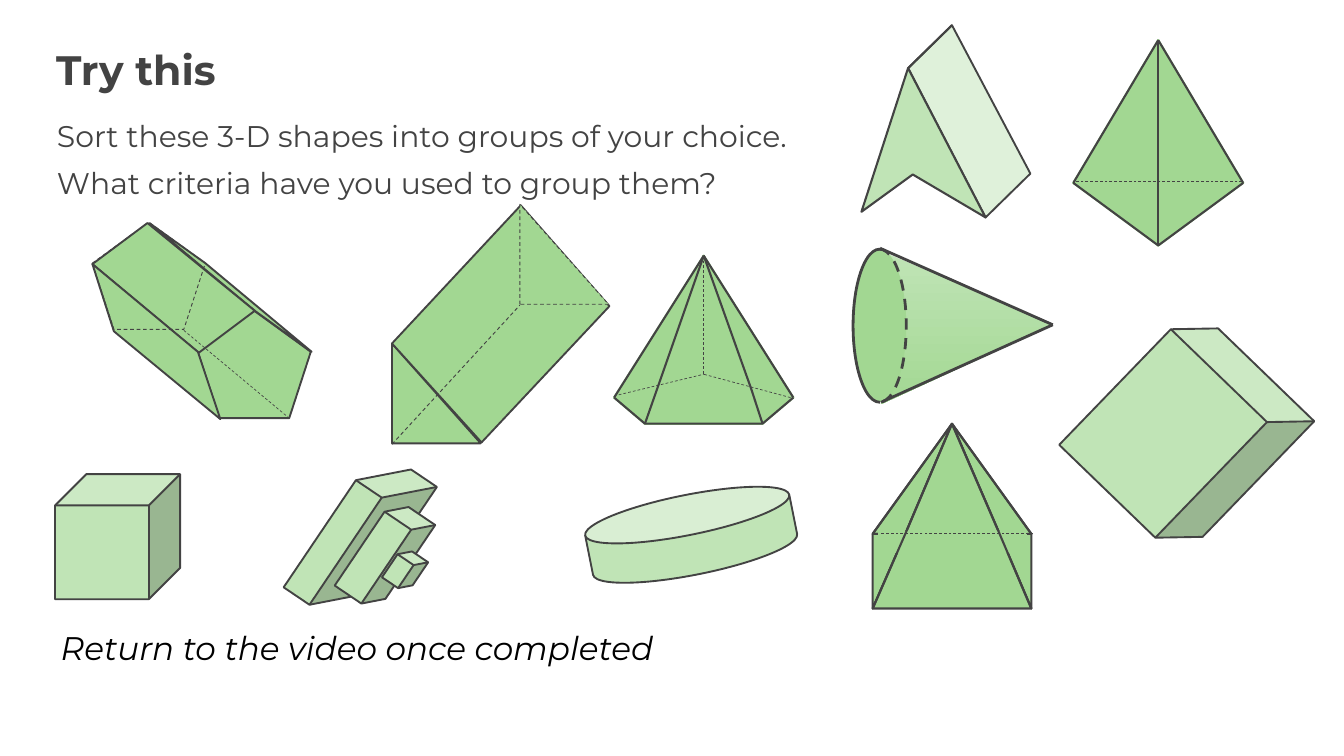
from lxml import etree
from pptx import Presentation
from pptx.dml.color import RGBColor
from pptx.enum.dml import MSO_LINE
from pptx.enum.shapes import MSO_CONNECTOR, MSO_SHAPE
from pptx.enum.text import MSO_ANCHOR
from pptx.oxml.ns import qn
from pptx.util import Pt

INK = RGBColor(0x43, 0x43, 0x43)
BLACK = RGBColor(0x00, 0x00, 0x00)
LEAF = RGBColor(0xA2, 0xD7, 0x92)
MINT = RGBColor(0xC0, 0xE4, 0xB6)
PALE = RGBColor(0xDF, 0xF1, 0xDA)
CONE_END = RGBColor(0xA3, 0xD8, 0x93)

DASH = MSO_LINE.DASH
STRAIGHT = MSO_CONNECTOR.STRAIGHT
TOP = MSO_ANCHOR.TOP
CUBE, CAN, RECT = MSO_SHAPE.CUBE, MSO_SHAPE.CAN, MSO_SHAPE.RECTANGLE
ARC, OVAL = MSO_SHAPE.ARC, MSO_SHAPE.OVAL
PENTAGON = MSO_SHAPE.REGULAR_PENTAGON
RIGHT_TRIANGLE = MSO_SHAPE.RIGHT_TRIANGLE


class Deck:
    """Holds the style, the current slide and the group being filled."""

    font = "Montserrat"

    def __init__(self, width, height):
        self.file = Presentation()
        self.file.slide_width, self.file.slide_height = Pt(width), Pt(height)
        self.page = self.file.slides.add_slide(self.file.slide_layouts[6])
        self.shapes = self.page.shapes

    def group(self):
        self.shapes = self.page.shapes.add_group_shape().shapes

    def ungroup(self):
        self.shapes = self.page.shapes

    def stroke(self, line, colour, width, dash=None):
        if width == 0:
            line.fill.background()
            return
        line.color.rgb = colour
        for name, value in {"width": Pt(width), "dash_style": dash}.items():
            setattr(line, name, value)

    def paint(self, shape, fill, colour, width, dash):
        shape.shadow.inherit = False
        if fill is None:
            shape.fill.background()
        else:
            shape.fill.solid()
            shape.fill.fore_color.rgb = fill
        self.stroke(shape.line, colour, width, dash)
        return shape

    def preset(self, kind, frame, fill, colour=INK, width=2, dash=None,
               turn=0, adjust=()):
        shape = self.shapes.add_shape(kind, *map(Pt, frame))
        shape.rotation = turn
        for index, value in enumerate(adjust):
            shape.adjustments[index] = value
        return self.paint(shape, fill, colour, width, dash)

    def outline(self, points, fill, colour=INK, width=2.25, close=True):
        corners = [(Pt(x), Pt(y)) for x, y in points]
        builder = self.shapes.build_freeform(*corners[0], scale=1.0)
        builder.add_line_segments(corners[1:], close=close)
        return self.paint(builder.convert_to_shape(), fill, colour, width, None)

    def edge(self, start, end, width=2.25, dash=None):
        line = self.shapes.add_connector(STRAIGHT, *map(Pt, (*start, *end)))
        self.stroke(line.line, INK, width, dash)
        etree.SubElement(line._element.spPr, qn("a:effectLst"))

    def text(self, frame, lines, size, colour, spacing, margins=(0, 0, 0, 0),
             bold=False, italic=False):
        box = self.shapes.add_textbox(*map(Pt, frame)).text_frame
        left, top, right, bottom = map(Pt, margins)
        settings = {"word_wrap": True, "vertical_anchor": TOP,
                    "margin_left": left, "margin_top": top,
                    "margin_right": right, "margin_bottom": bottom}
        for name, value in settings.items():
            setattr(box, name, value)
        for index, words in enumerate(lines):
            para = box.add_paragraph() if index else box.paragraphs[0]
            para.line_spacing = spacing
            span = para.add_run()
            span.text = words
            span.font.color.rgb = colour
            style = {"name": self.font, "size": Pt(size),
                     "bold": bold, "italic": italic}
            for name, value in style.items():
                setattr(span.font, name, value)


def main():
    deck = Deck(1440, 810)

    # Heading and task
    deck.text((60, 40, 1040, 128), ["Try this"], 44, INK, 1.15, bold=True)
    deck.text((59, 115, 1295, 469),
              ["Sort these 3-D shapes into groups of your choice.",
               "What criteria have you used to group them?"],
              32, INK, 1.3, margins=(2, 0, 0, 0))

    # Cube, cuboid and cylinder
    deck.preset(CUBE, (59, 508, 134, 134), MINT, adjust=[0.25])
    deck.preset(CUBE, (1182, 360, 179, 208), MINT, turn=44, adjust=[0.2])
    deck.preset(CAN, (629, 530, 223, 86), MINT, turn=348.7, adjust=[0.5])

    # Stepped stack of cuboids
    deck.group()
    for frame, depth in [((348, 485, 76, 181), 0.56),
                         ((386, 538, 53, 114), 0.35),
                         ((418, 590, 32, 41), 0.35)]:
        deck.preset(CUBE, frame, MINT, turn=34, adjust=[depth])

    # Arrowhead prism
    deck.group()
    tip, back_tip, heel = (973, 73), (1020, 27), (1056, 233)
    deck.outline([tip, back_tip, (1104, 186), heel], PALE, width=2)
    deck.outline([(923, 227), tip, heel, (978, 187)], MINT)
    deck.edge(tip, back_tip)

    # Pentagonal pyramid
    deck.group()
    apex, left, right = (754, 274), (658, 426), (850, 426)
    front_left, front_right = (691, 454), (817, 454)
    inner_left, inner_right, back = (704, 417), (805, 417), (754, 408)
    for face in [(inner_right, front_right, front_left, inner_left, back),
                 (inner_left, apex, back), (left, apex, inner_left),
                 (inner_left, front_left, left),
                 (inner_right, front_right, right),
                 (back, apex, inner_right), (apex, right, inner_right)]:
        deck.outline(face, LEAF, colour=LEAF)
    for corner in (left, right):
        deck.edge(apex, corner)
    deck.outline([left, front_left, front_right, right], LEAF, close=False)
    for side in [(inner_left, front_left), (inner_right, front_right)]:
        deck.outline([apex, *side], None, close=False)
    for corner in (apex, (663, 423), (847, 426)):
        deck.edge(corner, (754, 401), width=0.75, dash=DASH)

    # Square pyramid
    deck.group()
    apex = (1020, 454)
    back_left, back_right = (935, 572), (1105, 572)
    front_left, front_right = (935, 652), (1105, 652)
    inner_left, inner_right = (970, 572), (1071, 572)
    for face in [(front_right, inner_right, back_right),
                 (back_left, apex, inner_left),
                 (inner_left, front_left, back_left),
                 (apex, back_right, inner_right),
                 (inner_right, inner_left, apex),
                 (inner_right, front_right, front_left, inner_left)]:
        deck.outline(face, LEAF)
    for corner in (back_left, back_right):
        deck.edge(apex, corner)
    deck.preset(RECT, (942, 570, 157, 22), LEAF, colour=LEAF)
    for side in [(inner_right, front_right), (inner_left, front_left)]:
        deck.outline([apex, *side], None, close=False)
    deck.edge((1107, 571), (942, 571), width=0.75, dash=DASH)

    # Triangular pyramid
    deck.group()
    apex, left, right = (1241, 43), (1150, 196), (1332, 196)
    centre, front = (1241, 196), (1241, 263)
    for face in [(left, centre, front), (centre, left, apex),
                 (apex, right, centre), (centre, right, front)]:
        deck.outline(face, LEAF, colour=LEAF)
    deck.outline([right, front, left], LEAF, close=False)
    for corner in (left, right, front):
        deck.edge(apex, corner)
    deck.edge((1331, 194), (1150, 194), width=0.75, dash=DASH)

    # Triangular prism
    deck.group()
    deck.preset(RIGHT_TRIANGLE, (420, 368, 95, 107), LEAF)
    deck.outline([(420, 368), (558, 220), (653, 328), (516, 474)], LEAF, width=2)
    deck.preset(RIGHT_TRIANGLE, (557, 219, 95, 107), LEAF, width=1, dash=DASH)
    deck.edge((420, 476), (557, 327), width=1, dash=DASH)

    # Pentagonal prism
    deck.group()
    deck.preset(PENTAGON, (212, 333, 121, 115), LEAF)
    for face in [((160, 239), (273, 333), (334, 377), (220, 282)),
                 ((158, 239), (99, 283), (213, 378), (273, 333)),
                 ((99, 283), (122, 355), (236, 449), (212, 377))]:
        deck.outline(face, LEAF, width=2)
    deck.preset(PENTAGON, (99, 238, 121, 115), None, width=1, dash=DASH)
    deck.edge((197, 354), (311, 449), width=0.75, dash=DASH)

    # Cone
    deck.group()
    point = (1128, 348)
    side = deck.outline([(942, 268), (944, 433), point], MINT, width=0)
    side.fill.gradient()
    side.fill.gradient_angle = 270
    for stop, colour in zip(side.fill.gradient_stops, (MINT, CONE_END)):
        stop.color.rgb = colour
    deck.preset(OVAL, (913, 267, 58, 164), LEAF, width=0)
    for angles, dash in [((162, 54.2), DASH), ((53.8, 162.1), None)]:
        deck.preset(ARC, (914, 267, 57, 164), None, width=3, dash=dash,
                    adjust=angles)
    for rim in [(943, 266), (944, 431)]:
        deck.edge(rim, point, width=3)

    # Closing instruction
    deck.ungroup()
    deck.text((58, 657, 658, 58), ["Return to the video once completed"],
              35, BLACK, 1.3, margins=(7.2, 3.6, 7.2, 3.6), italic=True)

    deck.file.save("out.pptx")


if __name__ == "__main__":
    main()
